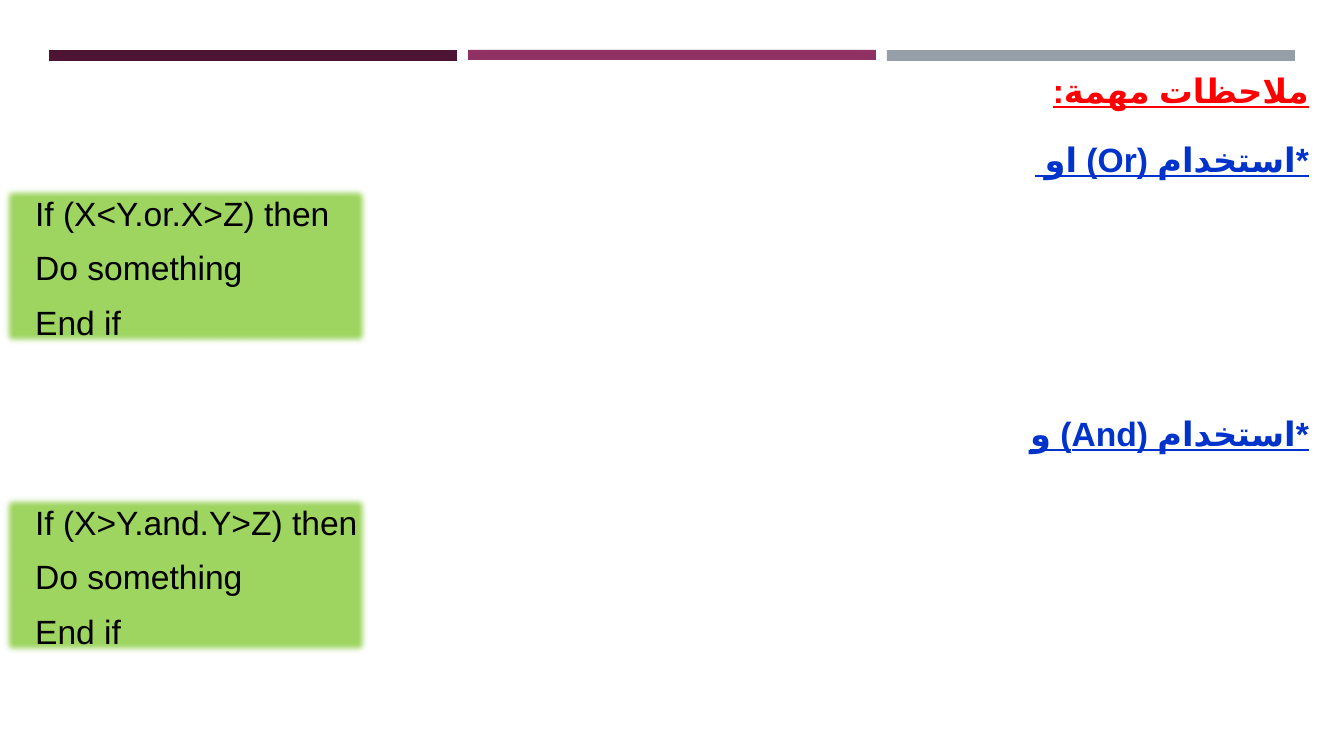
from lxml import etree
from pptx import Presentation
from pptx import util as u
from pptx.dml.color import RGBColor
from pptx.enum import shapes, text
from pptx.oxml.ns import qn

PX = 914400 / 100.8


def px(*lengths):
    return [u.Emu(round(n * PX)) for n in lengths]


def write(shape, lines, color, heading=False):
    """Fill a shape with 24 pt lines; a heading is bold, underlined and right-to-left."""
    frame = shape.text_frame
    frame.word_wrap = True
    frame.auto_size = text.MSO_AUTO_SIZE.SHAPE_TO_FIT_TEXT
    frame.vertical_anchor = text.MSO_ANCHOR.TOP
    for i, line in enumerate(lines):
        para = frame.add_paragraph() if i else frame.paragraphs[0]
        para.alignment = text.PP_ALIGN.RIGHT if heading else text.PP_ALIGN.LEFT
        para.line_spacing = 1.07
        para.space_after = u.Pt(8)
        props = para._p.get_or_add_pPr()
        props.set("marL", str(u.Inches(0.25)))
        props.set("indent", "0")
        if heading:
            props.set("rtl", "1")
        run = para.add_run()
        run.text = line
        font = run.font
        font.name = "Arial"
        font.size = u.Pt(24)
        font.color.rgb = RGBColor.from_string(color)
        run_props = run._r.get_or_add_rPr()
        run_props.set("lang", "ar-IQ" if heading else "en-US")
        if heading:
            font.bold = font.underline = True
        etree.SubElement(run_props, qn("a:cs"), typeface="Arial")


prs = Presentation()
prs.slide_width, prs.slide_height = px(1344, 756)
slide = prs.slides.add_slide(prs.slide_layouts[6])

bars = [(49, 50, 408, 11, "4D1434"), (468, 50, 408, 10, "903163"), (887, 50, 408, 11, "969FA7")]
code_boxes = [(0, 185, 371, 163, "9ED561"), (0, 494, 371, 163, "9ED561")]
blocks = []
for *place, color in bars + code_boxes:
    block = slide.shapes.add_shape(shapes.MSO_SHAPE.RECTANGLE, *px(*place))
    block.shadow.inherit = False
    block.fill.solid()
    block.fill.fore_color.rgb = RGBColor.from_string(color)
    block.line.fill.background()
    blocks.append(block)

conditions = ["If (X<Y.or.X>Z) then", "If (X>Y.and.Y>Z) then"]
for code_box, condition in zip(blocks[len(bars):], conditions):
    effects = code_box._element.spPr.find(qn("a:effectLst"))
    etree.SubElement(effects, qn("a:softEdge"), rad=str(u.Pt(5)))
    write(code_box, [condition, "Do something", "End if"], "000000")

headings = [
    (62, "ملاحظات مهمة:", "FF0000"),
    (131, "*استخدام (Or) او ", "0033CC"),
    (405, "*استخدام (And) و", "0033CC"),
]
for top, heading, color in headings:
    write(slide.shapes.add_textbox(*px(672, top, 672, 53)), [heading], color, heading=True)

prs.save("out.pptx")
